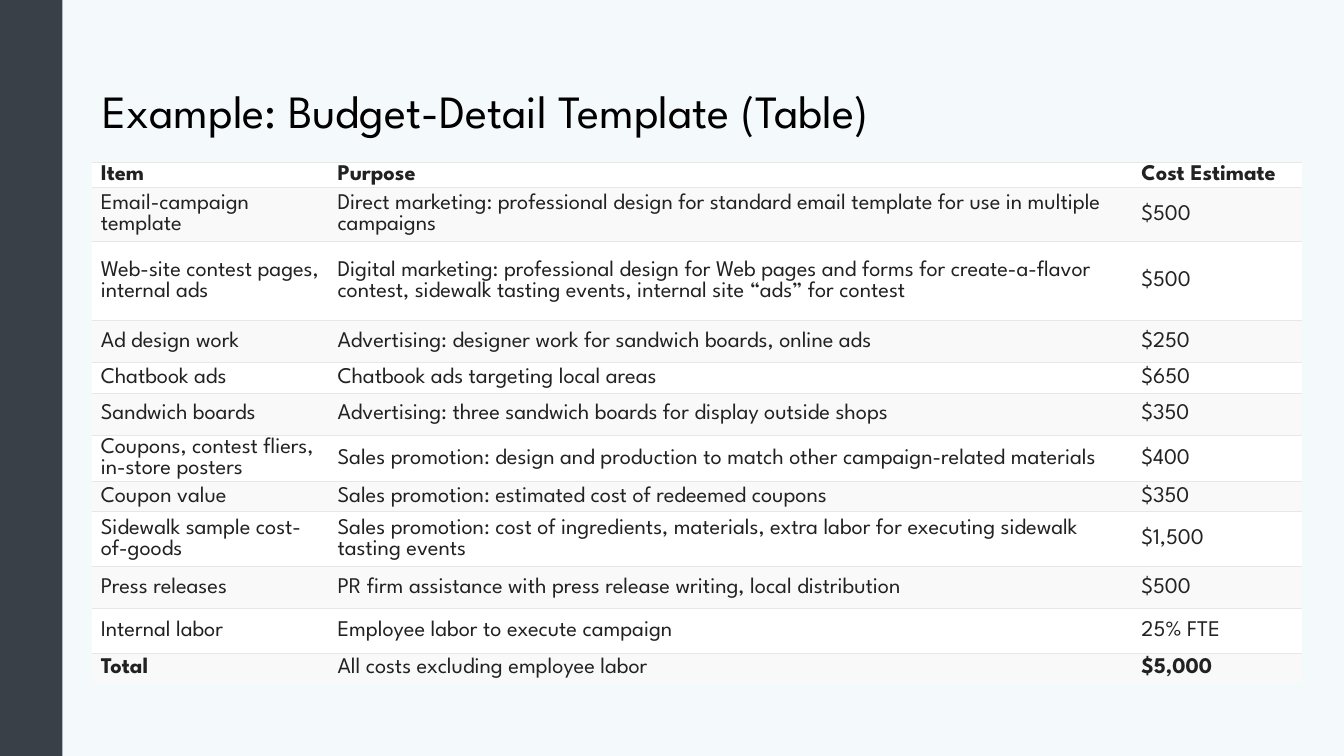
from dataclasses import dataclass

from lxml import etree
from pptx import Presentation
from pptx import util as u
from pptx.dml.color import RGBColor
from pptx.enum import shapes, text
from pptx.oxml import ns


@dataclass(frozen=True)
class Theme:
    font: str = "League Spartan"
    background: str = "F4F9FC"
    sidebar: str = "3A4047"
    title: str = "000000"
    body: str = "222222"
    rule: str = "E7E7E7"
    bands: tuple = ("FFFFFF", "F9F9F9")
    title_size: int = 33
    body_size: int = 16
    body_leading: int = 15
    rule_width: float = 0.75


THEME = Theme()

COLUMN_WIDTHS = (2.35, 7.98, 1.68)

# Row height, item, purpose, cost
BUDGET = [
    (0.25, "Item", "Purpose", "Cost Estimate"),
    (0.54, "Email-campaign template",
     "Direct marketing: professional design for standard email template "
     "for use in multiple campaigns", "$500"),
    (0.78, "Web-site contest pages, internal ads",
     "Digital marketing: professional design for Web pages and forms for "
     "create-a-flavor contest, sidewalk tasting events, internal site “ads” "
     "for contest", "$500"),
    (0.42, "Ad design work",
     "Advertising: designer work for sandwich boards, online ads", "$250"),
    (0.3, "Chatbook ads", "Chatbook ads targeting local areas", "$650"),
    (0.42, "Sandwich boards",
     "Advertising: three sandwich boards for display outside shops", "$350"),
    (0.46, "Coupons, contest fliers, in-store posters",
     "Sales promotion: design and production to match other "
     "campaign-related materials", "$400"),
    (0.3, "Coupon value",
     "Sales promotion: estimated cost of redeemed coupons", "$350"),
    (0.54, "Sidewalk sample cost-of-goods",
     "Sales promotion: cost of ingredients, materials, extra labor for "
     "executing sidewalk tasting events", "$1,500"),
    (0.42, "Press releases",
     "PR firm assistance with press release writing, local distribution",
     "$500"),
    (0.44, "Internal labor", "Employee labor to execute campaign", "25% FTE"),
    (0.3, "Total", "All costs excluding employee labor", "$5,000"),
]


def set_all(target, values):
    for name, value in values.items():
        setattr(target, name, value)


def paint(fill, color):
    fill.solid()
    fill.fore_color.rgb = RGBColor.from_string(color)


def write(p, words, size, color, spacing, bold=False):
    p.line_spacing = spacing
    r = p.add_run()
    r.text = words
    set_all(r.font, {"name": THEME.font, "size": u.Pt(size), "bold": bold})
    r.font.color.rgb = RGBColor.from_string(color)


def set_border(cell, side, color=None):
    tc_pr = cell._tc.get_or_add_tcPr()
    ln = etree.SubElement(tc_pr, ns.qn(f"a:ln{side}"),
                          w=str(u.Pt(THEME.rule_width)))
    if color:
        fill = etree.SubElement(ln, ns.qn("a:solidFill"))
        etree.SubElement(fill, ns.qn("a:srgbClr"), val=color)
    else:
        etree.SubElement(ln, ns.qn("a:noFill"))


def add_sidebar(s, left, top, width, height):
    sp = s.shapes.add_shape(shapes.MSO_SHAPE.RECTANGLE, u.Inches(left),
                            u.Inches(top), u.Inches(width), u.Inches(height))
    sp.shadow.inherit = False
    paint(sp.fill, THEME.sidebar)
    sp.line.fill.background()


def add_title(s, left, top, width, height):
    sp = s.shapes.add_textbox(u.Inches(left), u.Inches(top),
                              u.Inches(width), u.Inches(height))
    tf = sp.text_frame
    set_all(tf, {"word_wrap": True,
                 "vertical_anchor": text.MSO_ANCHOR.MIDDLE})
    write(tf.paragraphs[0], "Example: Budget-Detail Template (Table)",
          THEME.title_size, THEME.title, 0.9)


def add_budget_table(s, left, top, width):
    height = sum(row[0] for row in BUDGET)
    table = s.shapes.add_table(
        len(BUDGET), len(COLUMN_WIDTHS), u.Inches(left), u.Inches(top),
        u.Inches(width), u.Inches(height)).table
    set_all(table, {"first_row": False, "horz_banding": False})
    for column, share in zip(table.columns, COLUMN_WIDTHS):
        column.width = u.Inches(width * share / sum(COLUMN_WIDTHS))

    last = len(BUDGET) - 1
    cell_format = {"vertical_anchor": text.MSO_ANCHOR.MIDDLE,
                   "margin_left": u.Inches(0.09),
                   "margin_right": u.Inches(0.09),
                   "margin_top": u.Inches(0.02),
                   "margin_bottom": u.Inches(0.02)}
    for i, (row_height, *entries) in enumerate(BUDGET):
        table.rows[i].height = u.Inches(row_height)
        for j, words in enumerate(entries):
            cell = table.cell(i, j)
            set_all(cell, cell_format)
            # Horizontal rules only, none below the total
            set_border(cell, "L")
            set_border(cell, "R")
            set_border(cell, "T", THEME.rule)
            set_border(cell, "B", THEME.rule if i < last else None)
            paint(cell.fill, THEME.bands[i % 2])
            bold = i == 0 or (i == last and j != 1)
            write(cell.text_frame.paragraphs[0], words, THEME.body_size,
                  THEME.body, u.Pt(THEME.body_leading), bold)


def build_budget_slide(prs):
    s = prs.slides.add_slide(prs.slide_layouts[6])
    paint(s.background.fill, THEME.background)
    add_sidebar(s, 0, 0, 0.62, 7.5)
    add_title(s, 0.92, 0.4, 11.5, 1.45)
    add_budget_table(s, 0.91, 1.61, 12)


def main():
    prs = Presentation()
    set_all(prs, {"slide_width": u.Inches(13.33),
                  "slide_height": u.Inches(7.5)})
    build_budget_slide(prs)
    prs.save("out.pptx")


if __name__ == "__main__":
    main()
